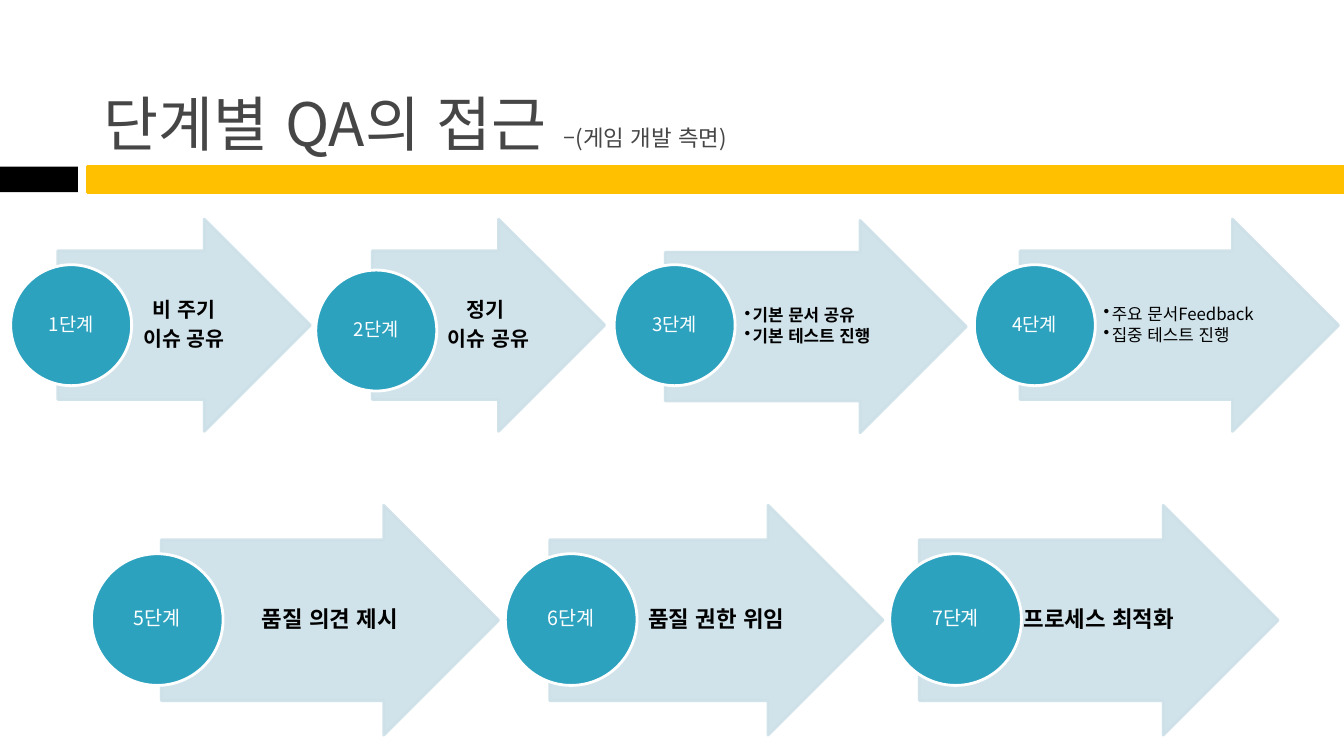
from pptx import Presentation
from pptx import util as u
from pptx.dml.color import RGBColor
from pptx.enum import shapes, text
from pptx.oxml import ns
from lxml import etree

COLUMNS, ROWS = 100, 56.25
CELL = u.Inches(0.1)
FONT = "Noto Sans CJK KR"
TEAL, PALE, YELLOW = "2DA2BF", "CDE0E8", "FFC000"
WHITE, BLACK, GREY = "FFFFFF", "000000", "464646"


def grid(*cells):
    """Turn columns and rows into lengths."""
    return [round(cell * CELL) for cell in cells]


def color(value):
    """Turn a hex string into a colour."""
    return RGBColor.from_string(value)


def add_child(parent, tag, **attributes):
    """Append a drawing element with the given attributes."""
    return etree.SubElement(parent, ns.qn(tag), attributes)


def style_run(run, size, ink, bold=False):
    """Set the font, size, colour, weight and language of a run."""
    run.font.size, run.font.bold = u.Pt(size), bold
    run.font.color.rgb = color(ink)
    run.font.name = FONT
    properties = run._r.get_or_add_rPr()
    properties.set("lang", "ko-KR")
    properties.set("kern", "1200")
    add_child(properties, "a:ea", typeface=FONT)


def add_figure(slide, kind, place, fill, line=None):
    """Add a filled preset shape, outlined if a line colour is given."""
    figure = slide.shapes.add_shape(kind, *grid(*place))
    figure.shadow.inherit = False
    figure.fill.solid()
    figure.fill.fore_color.rgb = color(fill)
    if line:
        figure.line.color.rgb = color(line)
        figure.line.width = u.Pt(1.5)
    else:
        figure.line.fill.background()
    return figure


def write(frame, content, size, ink, bold=False, bulleted=False):
    """Fill a frame with vertically centred lines, bulleted or centred."""
    frame.word_wrap = True
    frame.vertical_anchor = text.MSO_ANCHOR.MIDDLE
    frame.margin_left = u.Inches(0.03 if bulleted else 0.01)
    frame.margin_right = frame.margin_top = frame.margin_bottom = u.Inches(0.01)
    frame.text = content
    for paragraph in frame.paragraphs:
        paragraph.line_spacing = 0.9
        paragraph.space_after = u.Pt(size * (0.15 if bulleted else 0.35))
        if bulleted:
            properties = paragraph._p.get_or_add_pPr()
            properties.set("marL", str(u.Inches(0.06)))
            properties.set("indent", str(-u.Inches(0.06)))
            add_child(properties, "a:buChar", char="•")
        else:
            paragraph.alignment = text.PP_ALIGN.CENTER
        for run in paragraph.runs:
            style_run(run, size, ink, bold)


def add_title(slide, heading, aspect):
    """Add the heading with its small aspect note."""
    frame = slide.shapes.add_textbox(*grid(6.7, 1.3, 89.2, 11)).text_frame
    frame.word_wrap = True
    frame.vertical_anchor = text.MSO_ANCHOR.BOTTOM
    for words, size in ((heading, 32), (aspect, 12)):
        run = frame.paragraphs[0].add_run()
        run.text = words
        style_run(run, size, GREY)


def add_arrow(slide, left, middle, width, height):
    """Add a pale, slightly transparent block arrow."""
    place = left, middle - height / 2, width, height
    arrow = add_figure(slide, shapes.MSO_SHAPE.RIGHT_ARROW, place, PALE, PALE)
    arrow.adjustments[0], arrow.adjustments[1] = 0.7, 0.5
    for shade in arrow._element.spPr.iter(ns.qn("a:srgbClr")):
        add_child(shade, "a:alpha", val="90000")


def add_label(slide, left, middle, width, height, content, size, bold, bulleted):
    """Add the words over the middle half of an arrow."""
    place = left + width / 4, middle - height * 0.35, width / 2, height * 0.7
    label = slide.shapes.add_textbox(*grid(*place))
    write(label.text_frame, content, size, BLACK, bold, bulleted)


def add_badge(slide, left, middle, diameter, caption, size):
    """Add the round badge that names a step."""
    place = left, middle - diameter / 2, diameter, diameter
    badge = add_figure(slide, shapes.MSO_SHAPE.OVAL, place, TEAL, WHITE)
    write(badge.text_frame, caption, size, WHITE)


def add_steps(slide, first, steps, height, diameter, caption_size):
    """Add a row of numbered steps."""
    for number, step in enumerate(steps, first):
        badge_left, badge_middle, left, middle, width, content, size, bold = step
        arrow_place = left, middle, width, height
        add_arrow(slide, *arrow_place)
        add_label(slide, *arrow_place, content, size, bold, bulleted=size == 9)
        add_badge(slide, badge_left, badge_middle, diameter, f"{number}단계", caption_size)


def main():
    """Build the slide of staged QA steps."""
    deck = Presentation()
    deck.slide_width, deck.slide_height = grid(COLUMNS, ROWS)
    slide = deck.slides.add_slide(deck.slide_layouts[6])

    bar = shapes.MSO_SHAPE.RECTANGLE
    add_figure(slide, bar, (6.5, 12.4, COLUMNS - 6.5, 1.9), YELLOW, YELLOW)
    add_figure(slide, bar, (0, 12.4, 5.8, 1.9), BLACK)
    add_title(slide, "단계별 QA의 접근 ", "–(게임 개발 측면)")

    early_steps = [
        (0.8, 24.2, 4.3, 24.2, 18.8, "비 주기\n이슈 공유", 11, True),
        (23.5, 24.6, 27.7, 24.2, 17.3, "정기 \n이슈 공유", 11, True),
        (45.7, 24.2, 49.5, 24.3, 22.4, "기본 문서 공유\n기본 테스트 진행", 9, True),
        (72.5, 24.2, 75.9, 24.2, 23.7, "주요 문서Feedback\n집중 테스트 진행", 9, False),
    ]
    late_steps = [
        (6.8, 46.1, 12, 46.15, 25.1, "품질 의견 제시", 12, True),
        (37.6, 46.1, 40.9, 46.15, 24.8, "품질 권한 위임", 12, True),
        (66.2, 46.1, 68.4, 46.15, 26.7, "프로세스 최적화", 12, True),
    ]
    add_steps(slide, 1, early_steps, 15.8, 9, 10)
    add_steps(slide, 5, late_steps, 17.1, 9.8, 10.5)
    deck.save("out.pptx")


if __name__ == "__main__":
    main()
